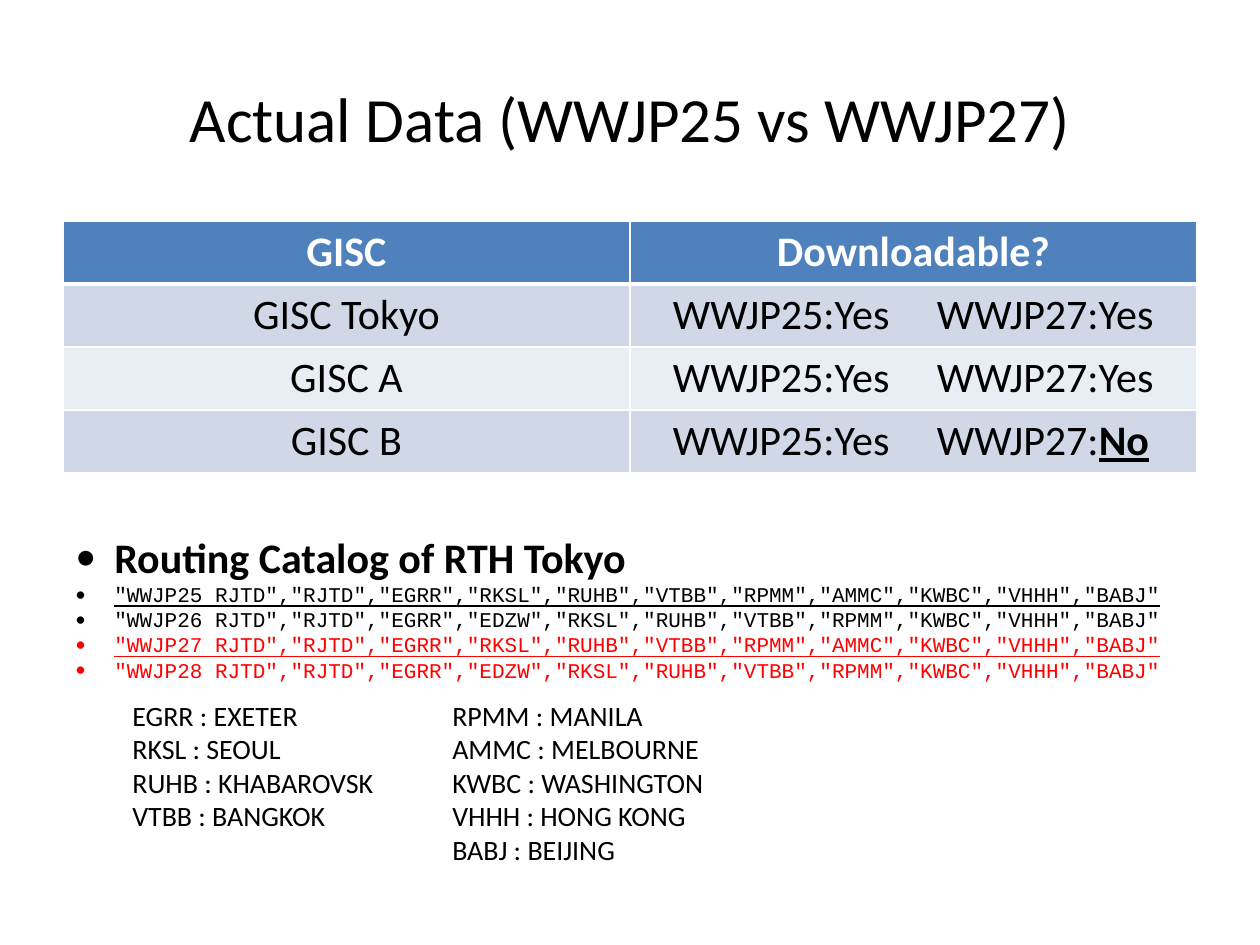
from lxml.etree import SubElement
from pptx import Presentation
from pptx.dml.color import RGBColor
from pptx.enum.text import MSO_ANCHOR as Anchor, PP_ALIGN as Align
from pptx.oxml.ns import qn
from pptx.util import Emu, Pt

SANS, MONO = "Calibri", "Courier New"
BLACK, WHITE, RED = "000000", "FFFFFF", "FF0000"
BLUE, DARK, LIGHT = "4F81BD", "D0D8E8", "E9EDF4"


def px(n):
    return Emu(round(n * 914400 / 126))


def tint(code):
    return RGBColor.from_string(code)


def style(para, size, color=BLACK, name=SANS, bold=False, under=False):
    font = para.font
    font.size, font.name = Pt(size), name
    font.bold, font.underline = bold, under
    font.color.rgb = tint(color)


def add_box(slide, box):
    frame = slide.shapes.add_textbox(*map(px, box)).text_frame
    frame.word_wrap = True
    return frame


def add_para(frame, index, text):
    para = frame.add_paragraph() if index else frame.paragraphs[0]
    para.text = text
    return para


def add_title(slide, box, text):
    frame = add_box(slide, box)
    frame.vertical_anchor = Anchor.MIDDLE
    para = add_para(frame, 0, text)
    para.alignment = Align.CENTER
    style(para, 36)


def add_edges(cell, top, bottom):
    props = cell._tc.get_or_add_tcPr()
    for side, width in zip("LRTB", (1, 1, top, bottom)):
        line = SubElement(props, qn(f"a:ln{side}"), w=str(Pt(width)))
        fill = SubElement(line, qn("a:solidFill"))
        SubElement(fill, qn("a:srgbClr"), val=WHITE)


def add_stop(para, pos):
    stops = SubElement(para._p.get_or_add_pPr(), qn("a:tabLst"))
    SubElement(stops, qn("a:tab"), pos=str(px(pos)), algn="l")


def add_grid(slide, box, rows):
    table = slide.shapes.add_table(len(rows), 2, *map(px, box)).table
    for r, row in enumerate(rows):
        table.rows[r].height = px(box[3] // len(rows))
        for c, text in enumerate(row):
            cell = table.cell(r, c)
            add_edges(cell, 3 if r == 1 else 1, 1 if r else 3)
            cell.fill.solid()
            cell.fill.fore_color.rgb = tint((DARK if r % 2 else LIGHT) if r else BLUE)
            cell.margin_left = cell.margin_right = px(18)
            cell.margin_top = cell.margin_bottom = px(6)
            para = cell.text_frame.paragraphs[0]
            # Two aligned answers share a cell by means of a tab stop
            if "\t" in text:
                cell.margin_left = px(43)
                add_stop(para, 264)
            else:
                para.alignment = Align.CENTER
            style(para, 24, BLACK if r else WHITE, bold=not r)
            head, mark, _ = text.partition("No")
            para.add_run().text = head
            if mark:
                run = para.add_run()
                run.text = mark
                run.font.bold = run.font.underline = True


def add_bullet(para):
    props = para._p.get_or_add_pPr()
    props.set("marL", str(px(39)))
    props.set("indent", str(-px(39)))
    SubElement(props, qn("a:buFont"), typeface=SANS)
    SubElement(props, qn("a:buChar"), char="•")


def add_routes(slide, box, head, routes):
    frame = add_box(slide, box)
    para = add_para(frame, 0, head)
    add_bullet(para)
    style(para, 24, bold=True)
    for i, (code, color, under, stops) in enumerate(routes, 1):
        names = [f"{code} RJTD", "RJTD", *stops.split()]
        para = add_para(frame, i, ",".join(f'"{name}"' for name in names))
        add_bullet(para)
        style(para, 12, color, MONO, under=under)


def add_key(slide, box, lines):
    frame = add_box(slide, box)
    for i, text in enumerate(lines):
        style(add_para(frame, i, text), 16)


def main():
    deck = Presentation()
    deck.slide_width, deck.slide_height = px(1260), px(945)
    slide = deck.slides.add_slide(deck.slide_layouts[6])

    add_title(slide, (63, 38, 1134, 158), "Actual Data (WWJP25 vs WWJP27)")

    # Download results
    both = "WWJP25:Yes\tWWJP27:Yes"
    add_grid(slide, (63, 221, 1134, 252), [
        ("GISC", "Downloadable?"),
        ("GISC Tokyo", both),
        ("GISC A", both),
        ("GISC B", "WWJP25:Yes\tWWJP27:No"),
    ])

    # Routing catalog
    odd = "EGRR RKSL RUHB VTBB RPMM AMMC KWBC VHHH BABJ"
    even = "EGRR EDZW RKSL RUHB VTBB RPMM KWBC VHHH BABJ"
    add_routes(slide, (63, 525, 1134, 165), "Routing Catalog of RTH Tokyo", [
        ("WWJP25", BLACK, True, odd),
        ("WWJP26", BLACK, False, even),
        ("WWJP27", RED, True, odd),
        ("WWJP28", RED, False, even),
    ])

    # Station names
    add_key(slide, (120, 692, 386, 149), [
        "EGRR : EXETER", "RKSL : SEOUL", "RUHB : KHABAROVSK", "VTBB : BANGKOK"])
    add_key(slide, (440, 692, 355, 217), [
        "RPMM : MANILA", "AMMC : MELBOURNE", "KWBC : WASHINGTON",
        "VHHH : HONG KONG", "BABJ : BEIJING"])

    deck.save("out.pptx")


if __name__ == "__main__":
    main()
